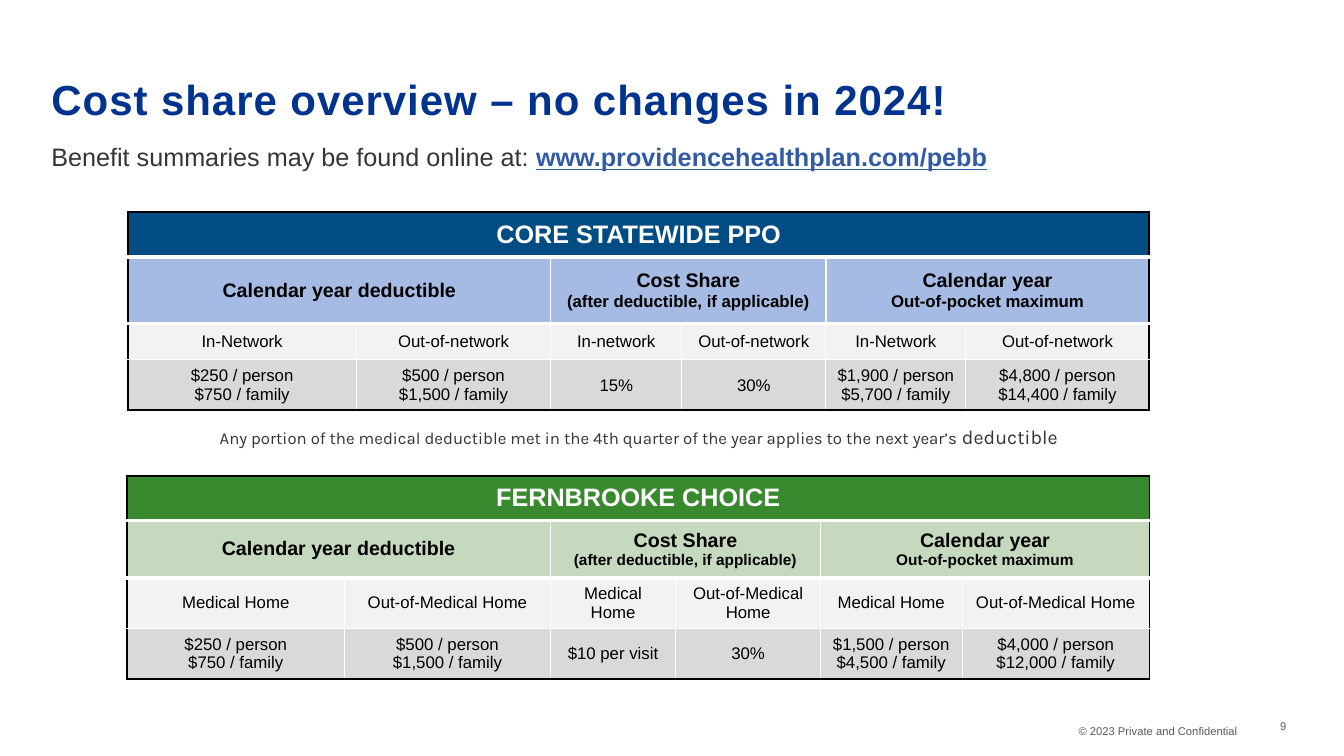
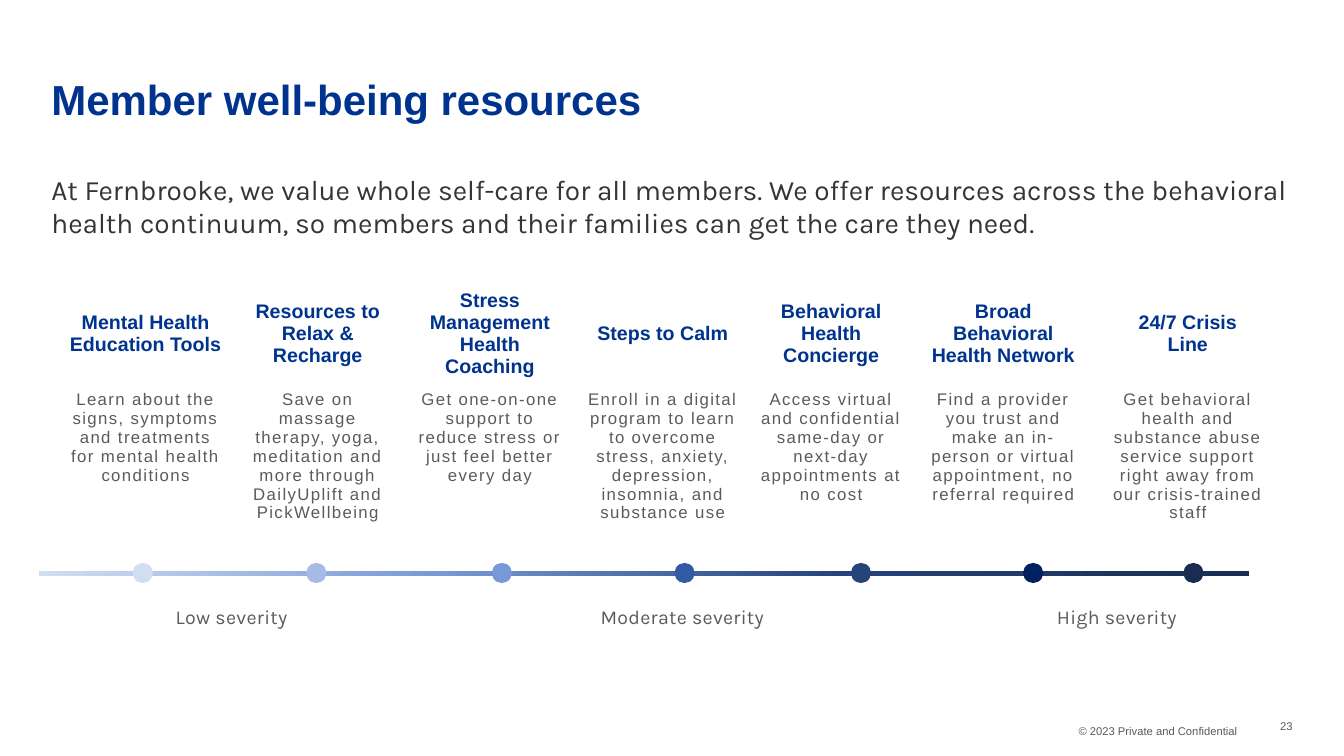
from dataclasses import dataclass
from typing import NamedTuple

from lxml.etree import SubElement
from pptx import Presentation
from pptx.dml.color import RGBColor
from pptx.enum.shapes import MSO_SHAPE
from pptx.enum.text import MSO_ANCHOR, PP_ALIGN
from pptx.oxml import parse_xml
from pptx.oxml.ns import nsdecls, qn
from pptx.util import Pt


class Box(NamedTuple):
    left: float
    top: float
    width: float
    height: float

    def lengths(self):
        return [Pt(value) for value in self]


class Style(NamedTuple):
    size: float
    color: str
    bold: bool = False
    font: str = "Arial"
    tracking: float = 0
    underline: bool = False


@dataclass(frozen=True)
class Theme:
    white: str = "FFFFFF"
    black: str = "000000"
    name_row: str = "F2F2F2"
    value_row: str = "D9D9D9"
    title: Style = Style(30, "00338E", True)
    spaced_title: Style = Style(30, "00338E", True, tracking=0.7)
    lead: Style = Style(18, "363436")
    link: Style = Style(18, "335BA4", True, underline=True)
    intro: Style = Style(20, "363436", font="Karla")
    note: Style = Style(12, "363436", font="Karla")
    note_end: Style = Style(14, "363436", font="Karla")
    footer: Style = Style(8, "595959")
    plan: Style = Style(18, "FFFFFF", True)
    group: Style = Style(14, "000000", True)
    plain: Style = Style(12, "000000")
    resource: Style = Style(14, "00338E", True)
    detail: Style = Style(12, "5B5B5B", tracking=1)
    severity: Style = Style(14, "5B5B5B", font="Karla", tracking=0.2)


THEME = Theme()

PPO_ROWS = [
    ["In-Network", "Out-of-network", "In-network", "Out-of-network",
     "In-Network", "Out-of-network"],
    ["$250 / person\n$750 / family", "$500 / person\n$1,500 / family", "15%", "30%",
     "$1,900 / person\n$5,700 / family", "$4,800 / person\n$14,400 / family"],
]
CHOICE_ROWS = [
    ["Medical Home", "Out-of-Medical Home"] * 3,
    ["$250 / person\n$750 / family", "$500 / person\n$1,500 / family",
     "$10 per visit", "30%",
     "$1,500 / person\n$4,500 / family", "$4,000 / person\n$12,000 / family"],
]
GROUPS = [
    ("Calendar year deductible", ""),
    ("Cost Share", "(after deductible, if applicable)"),
    ("Calendar year", "Out-of-pocket maximum"),
]
# Column width, heading, description
RESOURCES = [
    (123, "Mental Health Education Tools",
     "Learn about the signs, symptoms and treatments for mental health conditions"),
    (123, "Resources to Relax & Recharge",
     "Save on massage therapy, yoga, meditation and more through DailyUplift and "
     "PickWellbeing"),
    (123, "Stress Management Health Coaching",
     "Get one-on-one support to reduce stress or just feel better every day"),
    (124, "Steps to Calm",
     "Enroll in a digital program to learn to overcome stress, anxiety, depression, "
     "insomnia, and substance use"),
    (116.5, "Behavioral Health Concierge",
     "Access virtual and confidential same-day or next-day appointments at no cost"),
    (129.5, "Broad Behavioral Health Network",
     "Find a provider you trust and make an in-person or virtual appointment, "
     "no referral required"),
    (134, "24/7 Crisis\nLine",
     "Get behavioral health and substance abuse service support right away from our "
     "crisis-trained staff"),
]
# Centre of each dot, measured from the left end of the line, and its colour
SEVERITY_DOTS = [
    (74, "D2DDF1"), (198, "A5BBE3"), (330.5, "7899D5"), (461, "335BA3"),
    (587, "26447A"), (710, "002060"), (824.5, "192D52"),
]
SEVERITY_GRADIENT = [(0, "D2DDF1"), (33, "7899D5"), (66, "26447A"), (100, "192D52")]
SEVERITY_LABELS = [(97.5, "Low severity"), (401, "Moderate severity"),
                   (727, "High severity")]


def rgb(color):
    return RGBColor.from_string(color)


def set_font(font, style):
    font.name = style.font
    font.size = Pt(style.size)
    font.bold = style.bold
    font.color.rgb = rgb(style.color)
    if style.underline:
        font.underline = True


def write_paragraph(paragraph, runs, align=PP_ALIGN.LEFT):
    """Write (text, style) runs; the first style is the paragraph's font."""
    paragraph.alignment = align
    base = runs[0][1]
    set_font(paragraph.font, base)
    for text, style in runs:
        run = paragraph.add_run()
        run.text = text
        if style != base:
            set_font(run.font, style)
        if style.tracking:
            run.font._element.set("spc", str(round(style.tracking * 100)))


def add_text(slide, box, *runs, align=PP_ALIGN.LEFT, anchor=MSO_ANCHOR.TOP,
             line_height=None):
    frame = slide.shapes.add_textbox(*box.lengths()).text_frame
    frame.margin_left = frame.margin_right = frame.margin_top = frame.margin_bottom = 0
    frame.word_wrap = True
    frame.vertical_anchor = anchor
    paragraph = frame.paragraphs[0]
    if line_height:
        paragraph.line_spacing = Pt(line_height)
    write_paragraph(paragraph, runs, align)


def add_base_slide(presentation, title, title_style, number):
    """Add a slide with the shared title and footer."""
    slide = presentation.slides.add_slide(presentation.slide_layouts[6])
    add_text(slide, Box(36.7, 36, 887, 69), (title, title_style),
             anchor=MSO_ANCHOR.MIDDLE)
    add_text(slide, Box(770.4, 506.2, 122.4, 18),
             ("© 2023 Private and Confidential", THEME.footer), line_height=21)
    add_text(slide, Box(914.4, 514.1, 42.5, 18), (str(number), THEME.footer))
    return slide


def add_plain_table(slide, box, widths, heights):
    frame = slide.shapes.add_table(len(heights), len(widths), *box.lengths())
    table = frame.table
    table.first_row = table.horz_banding = False
    for column, width in zip(table.columns, widths):
        column.width = Pt(width)
    for row, height in zip(table.rows, heights):
        row.height = Pt(height)
    return table


def fill_cell(cell, paragraphs, fill=None, anchor=MSO_ANCHOR.MIDDLE):
    """Write centred (text, style) paragraphs into a cell."""
    cell.vertical_anchor = anchor
    if fill:
        cell.fill.solid()
        cell.fill.fore_color.rgb = rgb(fill)
    else:
        cell.fill.background()
    frame = cell.text_frame
    for index, item in enumerate(paragraphs):
        paragraph = frame.add_paragraph() if index else frame.paragraphs[0]
        write_paragraph(paragraph, [item], PP_ALIGN.CENTER)


def lines(text, style):
    return [(line, style) for line in text.split("\n")]


def set_borders(cell, left, right, top, bottom):
    """Give the four sides their (colour, width)."""
    properties = cell._tc.get_or_add_tcPr()
    sides = zip("LRTB", (left, right, top, bottom))
    for index, (side, (color, width)) in enumerate(sides):
        properties.insert(index, parse_xml(
            f'<a:ln{side} {nsdecls("a")} w="{Pt(width)}"><a:solidFill>'
            f'<a:srgbClr val="{color}"/></a:solidFill></a:ln{side}>'))


def rule_plan_table(table):
    """Black frame; white rules inside, heavier below the two heading rows."""
    frame = (THEME.black, 1.5)
    row_rules = [frame, (THEME.white, 3), (THEME.white, 3), (THEME.white, 0.75), frame]
    last = len(table.columns)
    for row in range(len(table.rows)):
        inner = (THEME.white, 1 if row == 1 else 0.75)
        for column in range(last):
            cell = table.cell(row, column)
            end = column + (cell.span_width if cell.is_merge_origin else 1)
            set_borders(cell, inner if column else frame,
                        frame if end == last else inner,
                        row_rules[row], row_rules[row + 1])


def add_plan_table(slide, box, widths, heights, name, colors, small_size, rows):
    table = add_plain_table(slide, box, widths, heights)
    header_color, group_color = colors
    last = len(widths) - 1
    table.cell(0, 0).merge(table.cell(0, last))
    fill_cell(table.cell(0, 0), [(name, THEME.plan)], header_color)
    small = THEME.group._replace(size=small_size)
    for index, (heading, remark) in enumerate(GROUPS):
        cell = table.cell(1, 2 * index)
        cell.merge(table.cell(1, 2 * index + 1))
        paragraphs = [(heading, THEME.group)]
        if remark:
            paragraphs.append((remark, small))
        fill_cell(cell, paragraphs, group_color)
    for row, (texts, fill) in enumerate(zip(rows, (THEME.name_row, THEME.value_row)), 2):
        for column, text in enumerate(texts):
            fill_cell(table.cell(row, column), lines(text, THEME.plain), fill)
    rule_plan_table(table)


def add_resource_table(slide, box):
    widths = [width for width, _, _ in RESOURCES]
    table = add_plain_table(slide, box, widths, [71.5, 104])
    for column, (_, heading, detail) in enumerate(RESOURCES):
        fill_cell(table.cell(0, column), lines(heading, THEME.resource))
        fill_cell(table.cell(1, column), lines(detail, THEME.detail),
                  anchor=MSO_ANCHOR.TOP)


def add_filled_shape(slide, kind, box):
    shape = slide.shapes.add_shape(kind, *box.lengths())
    shape.shadow.inherit = False
    shape.line.fill.background()
    return shape


def add_severity_scale(slide, box):
    """Gradient line with dots centred on it and labels below."""
    bar = add_filled_shape(slide, MSO_SHAPE.RECTANGLE, box)
    bar.fill.gradient()
    bar.fill.gradient_angle = 0
    stops = next(bar._element.iter(qn("a:gsLst")))
    stops.clear()
    for position, color in SEVERITY_GRADIENT:
        stop = SubElement(stops, qn("a:gs"), pos=str(position * 1000))
        SubElement(stop, qn("a:srgbClr"), val=color)
    size = 14.4
    top = box.top + (box.height - size) / 2
    for center, color in SEVERITY_DOTS:
        dot = add_filled_shape(slide, MSO_SHAPE.OVAL,
                               Box(box.left + center - size / 2, top, size, size))
        dot.fill.solid()
        dot.fill.fore_color.rgb = rgb(color)
    for left, label in SEVERITY_LABELS:
        add_text(slide, Box(box.left + left, box.top + 24.5, 130, 18),
                 (label, THEME.severity))


def build_cost_share(presentation):
    slide = add_base_slide(presentation, "Cost share overview – no changes in 2024!",
                           THEME.spaced_title, 9)
    add_text(slide, Box(36.7, 101.5, 700, 26),
             ("Benefit summaries may be found online at: ", THEME.lead),
             ("www.providencehealthplan.com/pebb", THEME.link), line_height=21)
    add_plan_table(slide, Box(91.5, 151.2, 729.5, 142),
                   [163, 139, 93.5, 103, 100, 131], [32.4, 47.5, 26, 36],
                   "CORE STATEWIDE PPO", ("004C83", "A5BBE3"), 12, PPO_ROWS)
    add_text(slide, Box(91.5, 303.8, 729.5, 20),
             ("Any portion of the medical deductible met in the 4th quarter of the year "
              "applies to the next year’s ", THEME.note),
             ("deductible", THEME.note_end), align=PP_ALIGN.CENTER)
    add_plan_table(slide, Box(90.7, 339.8, 730.5, 142),
                   [155.5, 147, 89.5, 103.5, 101, 134], [32, 41, 34.8, 34.8],
                   "FERNBROOKE CHOICE", ("39892F", "C6D9BF"), 11, CHOICE_ROWS)


def build_resources(presentation):
    slide = add_base_slide(presentation, "Member well-being resources", THEME.title, 23)
    add_text(slide, Box(36.7, 123, 887, 60),
             ("At Fernbrooke, we value whole self-care for all members. We offer "
              "resources across the behavioral health continuum, so members and their "
              "families can get the care they need.", THEME.intro))
    add_resource_table(slide, Box(42.5, 201, 873, 175.5))
    add_severity_scale(slide, Box(28, 407.5, 864, 3.6))


def main():
    presentation = Presentation()
    presentation.slide_width = Pt(960)
    presentation.slide_height = Pt(540)
    build_cost_share(presentation)
    build_resources(presentation)
    presentation.save("out.pptx")


if __name__ == "__main__":
    main()
